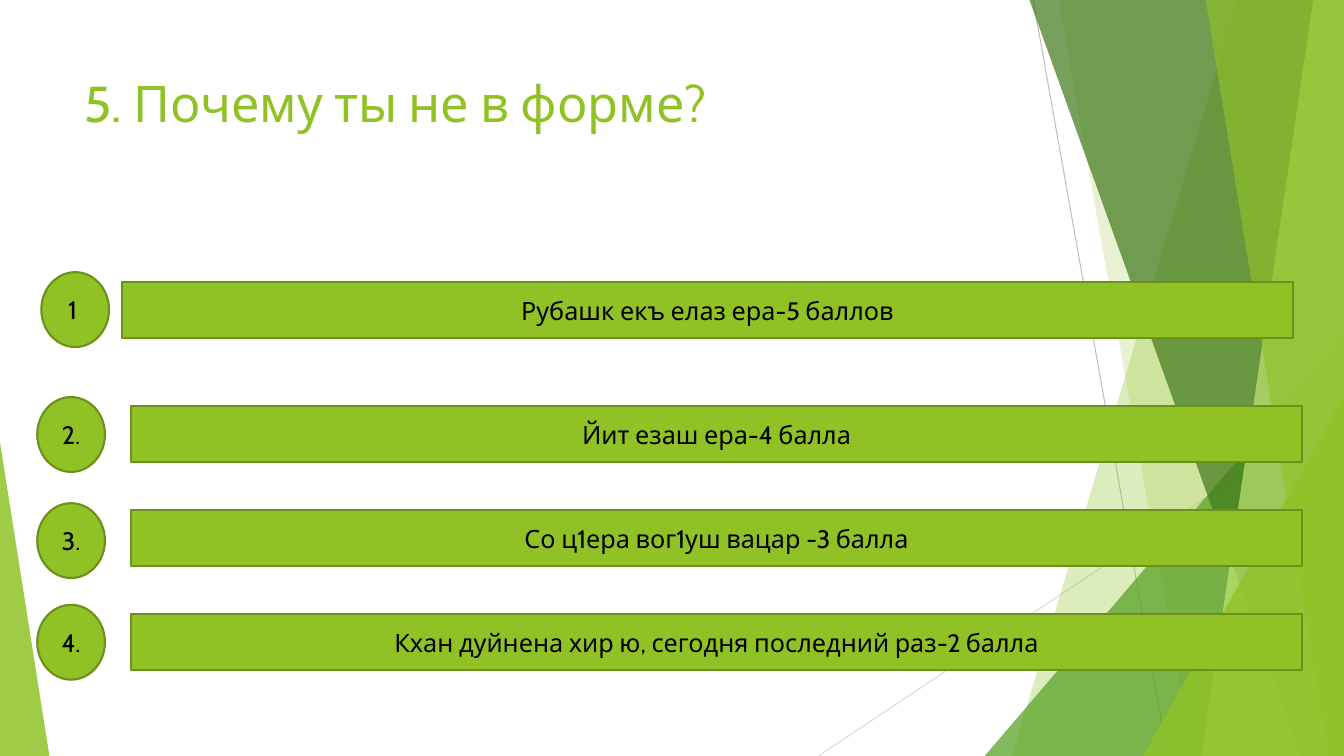
from lxml.etree import SubElement
from pptx import Presentation
from pptx.dml.color import RGBColor
from pptx.enum.shapes import MSO_CONNECTOR, MSO_SHAPE
from pptx.enum.text import MSO_ANCHOR, PP_ALIGN
from pptx.oxml.ns import qn
from pptx.util import Pt

WIDTH, HEIGHT = 960, 540
BLEED = -0.72
GREEN, DARK_GREEN, BLACK = "90C226", "6B901C", "000000"


def colour(hex_code):
    """Turn a hex string into a colour."""
    return RGBColor.from_string(hex_code)


class QuizSlide:
    """Holds the text style and the current slide, and draws its elements."""

    def __init__(self, slide):
        self.shapes = slide.shapes
        self.font_format = {"name": "Cabin", "size": Pt(18)}
        self.frame_format = {"word_wrap": True, "vertical_anchor": MSO_ANCHOR.MIDDLE}

    def fill_text(self, frame, runs, align, **changes):
        """Put runs of (text, colour, underline) into a text frame."""
        for key, value in (self.frame_format | changes.pop("frame_changes", {})).items():
            setattr(frame, key, value)
        paragraph = frame.paragraphs[0]
        paragraph.alignment = align
        for text, hex_code, underline in runs:
            run = paragraph.add_run()
            run.text = text
            run.font.color.rgb = colour(hex_code)
            font_format = self.font_format | {"underline": underline} | changes
            for key, value in font_format.items():
                setattr(run.font, key, value)

    def title(self, text, *box):
        """Add the question at the top."""
        question = self.shapes.add_textbox(*map(Pt, box))
        self.fill_text(question.text_frame, [(text, GREEN, None)], PP_ALIGN.LEFT,
                       size=Pt(36), frame_changes={"vertical_anchor": MSO_ANCHOR.TOP})

    def ray(self, hex_code, *ends):
        """Add a thin background line."""
        ray = self.shapes.add_connector(MSO_CONNECTOR.STRAIGHT, *map(Pt, ends))
        ray.line.color.rgb = colour(hex_code)
        ray.line.width = Pt(0.75)
        SubElement(ray._element.spPr, qn("a:effectLst"))

    def tint(self, facet, hex_code, opacity):
        """Give a background facet a see-through fill and no outline."""
        facet.shadow.inherit = False
        facet.fill.solid()
        facet.fill.fore_color.rgb = colour(hex_code)
        facet.line.fill.background()
        solid = facet._element.spPr.find(qn("a:solidFill"))
        SubElement(solid[0], qn("a:alpha"), val=str(opacity * 1000))

    def ribbon(self, top_x, bottom_x, hex_code, opacity):
        """Add a slanted facet that reaches the right edge."""
        builder = self.shapes.build_freeform(Pt(top_x), Pt(BLEED))
        corners = [(WIDTH, BLEED), (WIDTH, HEIGHT), (bottom_x, HEIGHT)]
        builder.add_line_segments([(Pt(x), Pt(y)) for x, y in corners], close=True)
        self.tint(builder.convert_to_shape(), hex_code, opacity)

    def wedge(self, left, top, width, apex, hex_code, opacity):
        """Add a triangle that stands on the bottom edge."""
        box = (left, top, width, HEIGHT - top)
        wedge = self.shapes.add_shape(MSO_SHAPE.ISOSCELES_TRIANGLE, *map(Pt, box))
        wedge.adjustments[0] = apex
        self.tint(wedge, hex_code, opacity)

    def label(self, kind, runs, *box):
        """Add a green outlined shape with centred text."""
        label = self.shapes.add_shape(kind, *map(Pt, box))
        label.shadow.inherit = False
        label.fill.solid()
        label.fill.fore_color.rgb = colour(GREEN)
        label.line.color.rgb = colour(DARK_GREEN)
        label.line.width = Pt(1.5)
        self.fill_text(label.text_frame, runs, PP_ALIGN.CENTER)


def main():
    """Build the quiz slide and save it."""
    deck = Presentation()
    deck.slide_width, deck.slide_height = Pt(WIDTH), Pt(HEIGHT)
    quiz = QuizSlide(deck.slides.add_slide(deck.slide_layouts[6]))

    quiz.ray("BFBFBF", 738, 0, 834, HEIGHT)
    quiz.ray("D9D9D9", WIDTH, 290, 584.6, HEIGHT)
    quiz.ribbon(884.2, 722.9, GREEN, 30)
    quiz.ribbon(756, 851.8, GREEN, 20)
    quiz.wedge(703.4, 239.8, 256.6, 1, "54A021", 72)
    quiz.ribbon(735.1, 929.5, "3F7819", 70)
    quiz.ribbon(938.2, 858.2, "C0E474", 70)
    quiz.ribbon(861.1, 949, GREEN, 65)
    quiz.wedge(816.5, 283, 143.5, 1, GREEN, 80)
    quiz.wedge(0, 316, 35.3, 0, GREEN, 85)

    first_number = [("1", BLACK, None), (".", "99CA3C", True)]
    answers = [
        (first_number, 29.5, 194.4, "Рубашк екъ елаз ера-5 баллов", 87.1, 201.4),
        ([("2.", BLACK, None)], 26.6, 283.6, "Йит езаш ера-4 балла", 93.6, 290.2),
        ([("3.", BLACK, None)], 26.6, 359.4, "Со ц1ера вог1уш вацар -3 балла", 93.6, 364.4),
        ([("4.", BLACK, None)], 26.6, 432,
         "Кхан дуйнена хир ю, сегодня последний раз-2 балла", 93.6, 438.6),
    ]
    for number, number_x, number_y, answer, answer_x, answer_y in answers:
        quiz.label(MSO_SHAPE.OVAL, number, number_x, number_y, 48.4, 53.5)
        quiz.label(MSO_SHAPE.RECTANGLE, [(answer, BLACK, None)],
                   answer_x, answer_y, 836.6, 40)

    quiz.title("5. Почему ты не в форме?", 53.3, 48, 676.8, 104)
    deck.save("out.pptx")


if __name__ == "__main__":
    main()
